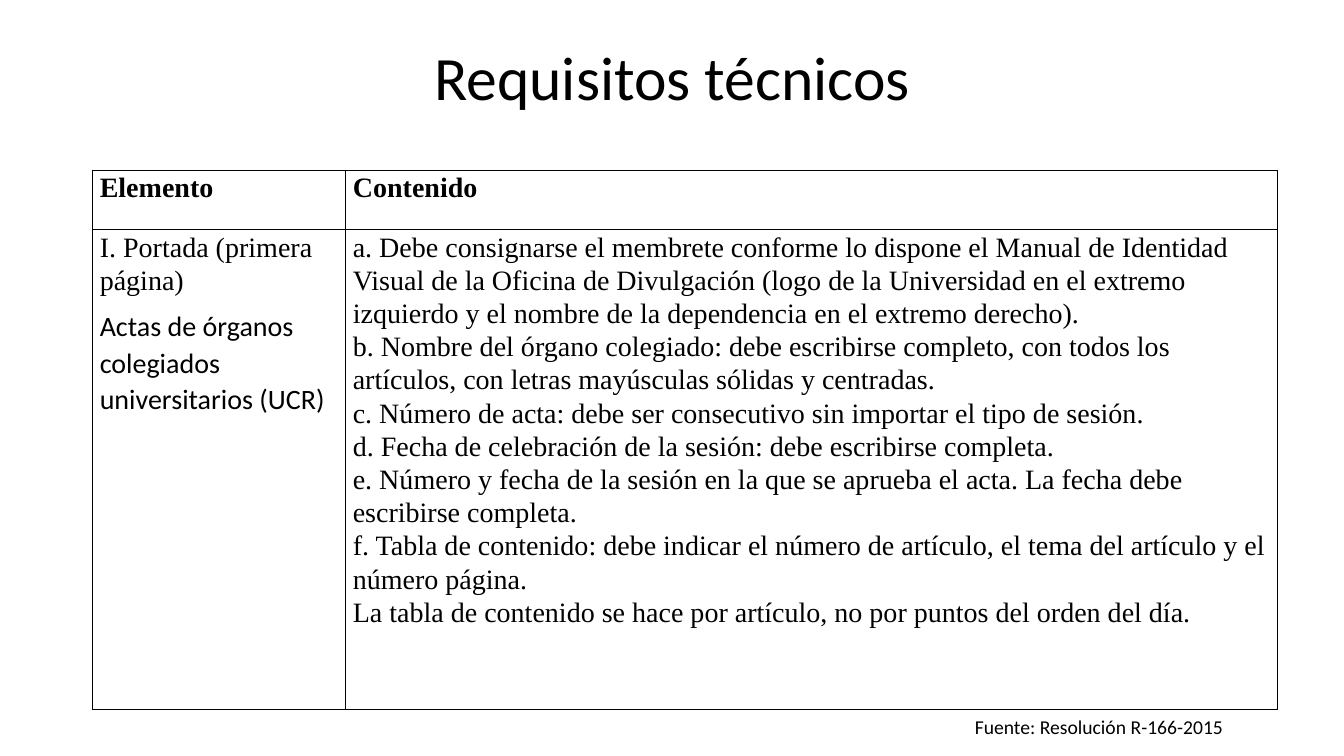
from lxml import etree
from pptx import Presentation
from pptx.dml.color import RGBColor
from pptx.enum.text import MSO_ANCHOR, MSO_AUTO_SIZE, PP_ALIGN
from pptx.oxml.ns import qn
from pptx.util import Inches, Pt

CENTER, LEFT = PP_ALIGN.CENTER, PP_ALIGN.LEFT
MIDDLE, TOP = MSO_ANCHOR.MIDDLE, MSO_ANCHOR.TOP
GROW = MSO_AUTO_SIZE.SHAPE_TO_FIT_TEXT
COLORS = {"ink": "000000", "paper": "FFFFFF"}
SANS, SERIF = "Calibri", "Times New Roman"


class SlideBuilder:
    """Places elements by percentages of the slide's width and height."""

    def __init__(self, presentation):
        self.width = presentation.slide_width
        self.height = presentation.slide_height
        self.slide = presentation.slides.add_slide(presentation.slide_layouts[6])
        background = self.slide.background.fill
        background.solid()
        background.fore_color.rgb = RGBColor.from_string(COLORS["paper"])

    def across(self, share):
        return round(self.width * share / 100)

    def down(self, share):
        return round(self.height * share / 100)

    def fill_paragraph(self, paragraph, text, size, font=SANS, bold=False, align=LEFT,
                       spacing=1.0, after=0):
        paragraph.alignment = align
        paragraph.line_spacing = spacing
        paragraph.space_after = Pt(after)
        run = paragraph.add_run()
        run.text = text
        run.font.size, run.font.name, run.font.bold = Pt(size), font, bold
        run.font.color.rgb = RGBColor.from_string(COLORS["ink"])

    def text(self, left, top, width, height, text, size, anchor=TOP, grow=False, **style):
        shape = self.slide.shapes.add_textbox(
            self.across(left), self.down(top), self.across(width), self.down(height))
        frame = shape.text_frame
        frame.word_wrap = True
        frame.vertical_anchor = anchor
        if grow:
            frame.auto_size = GROW
        self.fill_paragraph(frame.paragraphs[0], text, size, **style)

    def border(self, cell):
        properties = cell._tc.get_or_add_tcPr()
        for index, side in enumerate(("lnL", "lnR", "lnT", "lnB")):
            line = etree.Element(qn(f"a:{side}"), w=str(Pt(1)))
            fill = etree.SubElement(line, qn("a:solidFill"))
            etree.SubElement(fill, qn("a:srgbClr"), val=COLORS["ink"])
            properties.insert(index, line)

    def cell(self, cell, entries):
        cell.margin_left = cell.margin_right = Inches(0.07)
        cell.margin_top = cell.margin_bottom = 0
        cell.fill.background()
        self.border(cell)
        frame = cell.text_frame
        for index, (text, style) in enumerate(entries):
            paragraph = frame.add_paragraph() if index else frame.paragraphs[0]
            self.fill_paragraph(paragraph, text, 20, spacing=1.07, **style)

    def table(self, left, top, columns, rows, contents):
        table = self.slide.shapes.add_table(
            len(rows), len(columns), self.across(left), self.down(top),
            self.across(sum(columns)), self.down(sum(rows))).table
        table.first_row = table.horz_banding = False
        for column, share in zip(table.columns, columns):
            column.width = self.across(share)
        for row, share, row_contents in zip(table.rows, rows, contents):
            row.height = self.down(share)
            for cell, entries in zip(row.cells, row_contents):
                self.cell(cell, entries)


REQUIREMENTS = (
    "a. Debe consignarse el membrete conforme lo dispone el Manual de Identidad Visual "
    "de la Oficina de Divulgación (logo de la Universidad en el extremo izquierdo y el "
    "nombre de la dependencia en el extremo derecho).",
    "b. Nombre del órgano colegiado: debe escribirse completo, con todos los artículos, "
    "con letras mayúsculas sólidas y centradas.",
    "c. Número de acta: debe ser consecutivo sin importar el tipo de sesión.",
    "d. Fecha de celebración de la sesión: debe escribirse completa.",
    "e. Número y fecha de la sesión en la que se aprueba el acta. La fecha debe "
    "escribirse completa.",
    "f. Tabla de contenido: debe indicar el número de artículo, el tema del artículo y "
    "el número página.",
    "La tabla de contenido se hace por artículo, no por puntos del orden del día.",
)


def main():
    presentation = Presentation()
    presentation.slide_width, presentation.slide_height = Inches(13.33), Inches(7.5)
    builder = SlideBuilder(presentation)

    # Title
    builder.text(6.9, 5.33, 86.27, 10.53, "Requisitos técnicos", 44,
                 anchor=MIDDLE, align=CENTER, spacing=0.9)

    # Requirements table
    header = {"font": SERIF, "bold": True}
    body = {"font": SERIF}
    builder.table(6.9, 22.53, (18.83, 69.32), (7.87, 63.47), (
        ([("Elemento", {**header, "after": 8})], [("Contenido", header)]),
        ([("I. Portada (primera página)", {**body, "after": 8}),
          ("Actas de órganos colegiados universitarios (UCR)", {"after": 8})],
         [(requirement, body) for requirement in REQUIREMENTS]),
    ))

    # Source
    builder.text(71.79, 93.87, 22.66, 4.53, "Fuente: Resolución R-166-2015", 14, grow=True)

    presentation.save("out.pptx")


if __name__ == "__main__":
    main()
